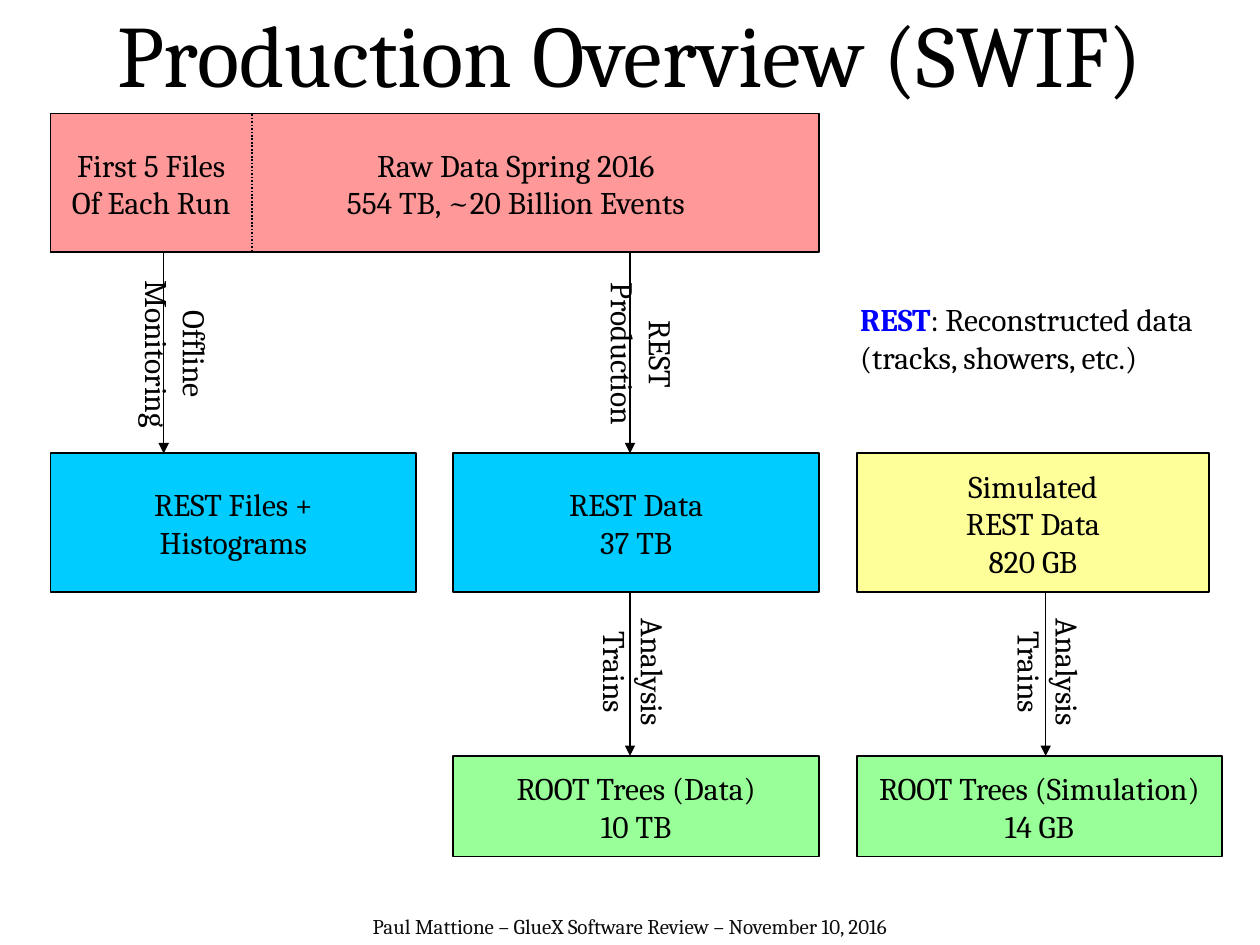
from dataclasses import dataclass

from lxml.etree import SubElement
from pptx import Presentation
from pptx.dml.color import RGBColor
from pptx.enum.dml import MSO_LINE
from pptx.enum.shapes import MSO_CONNECTOR, MSO_SHAPE
from pptx.enum.text import MSO_ANCHOR, MSO_AUTO_SIZE, PP_ALIGN
from pptx.oxml.ns import qn
from pptx.slide import Slide
from pptx.util import Cm, Pt

COLORS = {
    "raw": "FF9999",
    "rest": "00CCFF",
    "simulated": "FFFF99",
    "trees": "99FF99",
    "text": "000000",
    "footer": "0D0D0D",
    "term": "0000FF",
    "line": "000000",
}

COLUMNS = (1.02, 9.14, 17.27)
RAW_TOP, REST_TOP, TREES_TOP = 2.29, 9.14, 15.24
BOX_WIDTH, BOX_HEIGHT, TREES_HEIGHT = 7.37, 2.79, 2.03
RAW_BOTTOM = RAW_TOP + BOX_HEIGHT
REST_BOTTOM = REST_TOP + BOX_HEIGHT


def color(name):
    return RGBColor.from_string(COLORS[name])


@dataclass
class FlowSlide:
    slide: Slide
    font: str = "Cambria"
    size: int = 18

    def set_lines(self, shape, lines, align=PP_ALIGN.CENTER, size=None, text_color="text",
                  **frame_format):
        """Fill a shape with lines; a line is a string or a list of (text, colour, bold)."""
        frame = shape.text_frame
        frame_format = {"word_wrap": True, "auto_size": MSO_AUTO_SIZE.NONE, **frame_format}
        for name, value in frame_format.items():
            setattr(frame, name, value)
        for index, line in enumerate(lines):
            paragraph = frame.add_paragraph() if index else frame.paragraphs[0]
            paragraph.alignment = align
            parts = [(line, text_color, False)] if isinstance(line, str) else line
            for text, part_color, bold in parts:
                run = paragraph.add_run()
                run.text = text
                run.font.color.rgb = color(part_color)
                font_format = {"name": self.font, "size": Pt(size or self.size), "bold": bold}
                for name, value in font_format.items():
                    setattr(run.font, name, value)

    def title(self, text):
        title = self.slide.shapes.title
        place = {"left": Cm(0), "top": Cm(0), "width": Cm(25.4), "height": Cm(2.24)}
        for name, value in place.items():
            setattr(title, name, value)
        self.set_lines(title, [text], size=50, vertical_anchor=MSO_ANCHOR.BOTTOM)

    def box(self, left, top, width, height, lines, fill=None, dash=None, margin_left=0.28):
        box = self.slide.shapes.add_shape(
            MSO_SHAPE.RECTANGLE, Cm(left), Cm(top), Cm(width), Cm(height))
        box.shadow.inherit = False
        if fill:
            box.fill.solid()
            box.fill.fore_color.rgb = color(fill)
        else:
            box.fill.background()
        box.line.color.rgb = color("line")
        box.line.width = Pt(1)
        if dash:
            box.line.dash_style = dash
        self.set_lines(box, lines, vertical_anchor=MSO_ANCHOR.MIDDLE,
                       margin_left=Cm(margin_left), margin_right=Cm(0.28),
                       margin_top=Cm(0.18), margin_bottom=Cm(0.15))

    def text(self, left, top, width, height, lines, **text_format):
        text_box = self.slide.shapes.add_textbox(Cm(left), Cm(top), Cm(width), Cm(height))
        self.set_lines(text_box, lines, **text_format)
        return text_box

    def vertical_label(self, center_x, center_y, width, lines):
        height = 1.8
        label = self.text(center_x - width / 2, center_y - height / 2, width, height, lines,
                          vertical_anchor=MSO_ANCHOR.MIDDLE)
        label.rotation = 90

    def down_arrow(self, x, top, bottom):
        arrow = self.slide.shapes.add_connector(
            MSO_CONNECTOR.STRAIGHT, Cm(x), Cm(top), Cm(x), Cm(bottom))
        arrow.line.color.rgb = color("line")
        arrow.line.width = Pt(0.75)
        properties = arrow.element.spPr
        SubElement(properties.find(qn("a:ln")), qn("a:tailEnd"), type="triangle")
        SubElement(properties, qn("a:effectLst"))


def main():
    presentation = Presentation()
    presentation.slide_width, presentation.slide_height = Cm(25.4), Cm(19.05)
    flow = FlowSlide(presentation.slides.add_slide(presentation.slide_layouts[5]))

    flow.title("Production Overview (SWIF)")
    flow.text(0, 18.29, 25.4, 0.76,
              ["Paul Mattione – GlueX Software Review – November 10, 2016"],
              size=12, text_color="footer")

    first, second, third = COLUMNS
    flow.box(first, RAW_TOP, 15.49, BOX_HEIGHT,
             ["Raw Data Spring 2016", "554 TB, ~20 Billion Events"], "raw", margin_left=3.55)
    flow.box(first, RAW_TOP, 4.06, BOX_HEIGHT,
             ["First 5 Files", "Of Each Run"], dash=MSO_LINE.ROUND_DOT)

    for left, width, lines, fill in (
        (first, BOX_WIDTH, ["REST Files +", "Histograms"], "rest"),
        (second, BOX_WIDTH, ["REST Data", "37 TB"], "rest"),
        (third, 7.11, ["Simulated", "REST Data", "820 GB"], "simulated"),
    ):
        flow.box(left, REST_TOP, width, BOX_HEIGHT, lines, fill)

    for left, lines in (
        (second, ["ROOT Trees (Data)", "10 TB"]),
        (third, ["ROOT Trees (Simulation)", "14 GB"]),
    ):
        flow.box(left, TREES_TOP, BOX_WIDTH, TREES_HEIGHT, lines, "trees")

    for arrow_x, label_x, lines in (
        (3.3, 3.56, ["Offline", "Monitoring"]),
        (12.7, 12.95, ["REST", "Production"]),
    ):
        flow.down_arrow(arrow_x, RAW_BOTTOM, REST_TOP)
        flow.vertical_label(label_x, 7.14, 4.06, lines)

    for arrow_x, label_x in ((12.7, 12.79), (21.08, 21.15)):
        flow.down_arrow(arrow_x, REST_BOTTOM, TREES_TOP)
        flow.vertical_label(label_x, 13.55, 3.23, ["Analysis", "Trains"])

    flow.text(17.09, 5.92, 7.95, 1.8,
              [[("REST", "term", True), (": Reconstructed data", "text", False)],
               "(tracks, showers, etc.)"],
              align=PP_ALIGN.LEFT, word_wrap=False)

    presentation.save("out.pptx")


if __name__ == "__main__":
    main()
